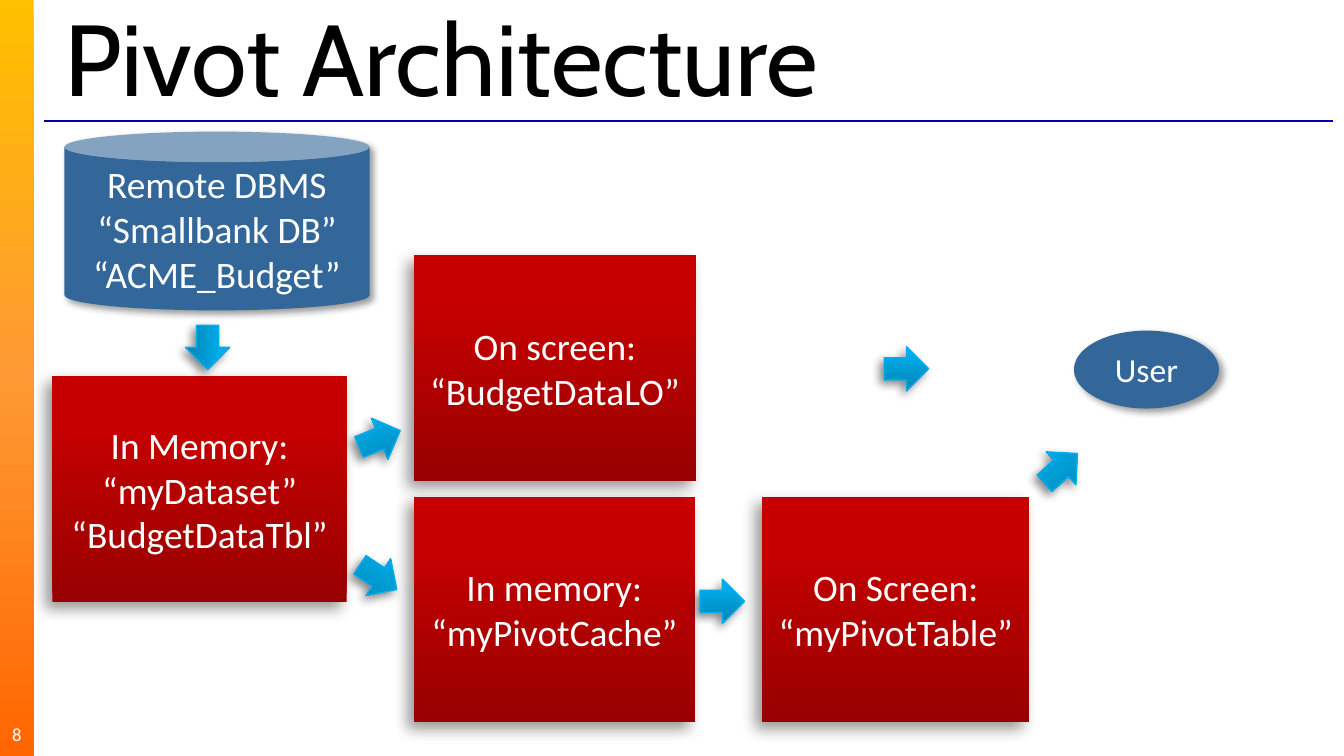
from lxml import etree
from pptx import Presentation, util as u
from pptx.dml.color import RGBColor
from pptx.enum import shapes as s, text as t
from pptx.oxml import ns

# Content: all lengths are in grid units, 100 units to the slide's width
WIDE, HIGH = 100, 56.25
BAR = 2.5
TITLE = "Pivot Architecture"
PAGE = "8"
COLS = {"load": 3.9, "view": 30.8, "out": 56.7}
ROWS = {"top": 19, "mid": 28, "low": 37}

# (column, row, width, height, paragraphs)
BOXES = [
    ("load", "mid", 21.9, 16.8, ["In Memory:", "“myDataset” “BudgetDataTbl”"]),
    ("view", "top", 21, 16.8, ["On screen:", "“BudgetDataLO”"]),
    ("view", "low", 20.9, 16.7, ["In memory:", "“myPivotCache”"]),
    ("out", "low", 19.9, 16.7, ["On Screen:\v“myPivotTable”"]),
]
# (shape, left, top, width, height, size, paragraphs)
ENDS = [
    (s.MSO_SHAPE.OVAL, 79.9, 24.6, 10.8, 5.8, "user", ["User"]),
    (s.MSO_SHAPE.CAN, 4.8, 9.8, 22.7, 13.3, "box",
     ["Remote DBMS", "“Smallbank DB”\v“ACME_Budget”"]),
]
# (left, top, turn)
ARROWS = [(26.6, 31, 338.1), (13.8, 24.2, 90), (26.5, 41.3, 33.8),
          (52.1, 43.1, 0), (77.3, 33.2, 317.9), (65.8, 25.8, 0)]
SIDE = 3.3

THEME = {
    "head": "Cabin", "body": "Calibri",
    "size": {"title": 54, "box": 20, "user": 18, "page": 10},
    "ink": "000000", "pale": "FFFFFF", "rule": "0000A5",
    "blue": "336699", "edge": "00ACEB",
    # stops, then angle counted anticlockwise
    "bar": ([(0, "FFC000"), (50, "FF9933"), (100, "FF6600")], 270),
    "red": ([(0, "980000"), (80, "C60000"), (100, "C70000")], 90),
    "cyan": ([(0, "0083B3"), (80, "00ABE9"), (100, "00ABEA")], 90),
    # opacity %, blur, distance, direction
    "shade": {"end": (40, 4, 3, 45), "box": (40, 8, 5, 135),
              "arrow": (45, 5, 3, 135)},
}

deck = Presentation()
deck.slide_width, deck.slide_height = u.Inches(10), u.Inches(5.625)
UNIT = deck.slide_width / WIDE
page = deck.slides.add_slide(deck.slide_layouts[6])


def grid(*vals):
    return [round(v * UNIT) for v in vals]


def rgb(code):
    return RGBColor.from_string(code)


def node(up, tag, **keys):
    return etree.SubElement(up, ns.qn("a:" + tag),
                            {k: str(v) for k, v in keys.items()})


def paint(fill, look):
    """Fill with one colour, or with (stops, angle)."""
    if isinstance(look, str):
        fill.solid()
        fill.fore_color.rgb = rgb(look)
        return
    stops, turn = look
    fill.gradient()
    fill.gradient_angle = turn
    ramp = fill._xPr.find(".//" + ns.qn("a:gsLst"))
    for old in list(ramp):
        ramp.remove(old)
    for pos, code in stops:
        node(node(ramp, "gs", pos=pos * 1000), "srgbClr", val=code)


def shade(shape, kind):
    alpha, blur, dist, turn = THEME["shade"][kind]
    root = shape._element.spPr.find(ns.qn("a:effectLst"))
    cast = node(root, "outerShdw", blurRad=u.Pt(blur), dist=u.Pt(dist),
                dir=turn * 60000, algn="ctr", rotWithShape=0)
    node(node(cast, "srgbClr", val="000000"), "alpha", val=alpha * 1000)


def draw(kind, spot, look, cast=None):
    shape = page.shapes.add_shape(kind, *grid(*spot))
    shape.shadow.inherit = False
    paint(shape.fill, look)
    shape.line.fill.background()
    if cast:
        shade(shape, cast)
    return shape


def write(shape, paras, size, face="body", ink="pale",
          align=t.PP_ALIGN.CENTER, **frame):
    body = shape.text_frame
    frame = {"word_wrap": True, "vertical_anchor": t.MSO_ANCHOR.MIDDLE, **frame}
    for key, val in frame.items():
        setattr(body, key, val)
    body.text = "\n".join(paras)
    form = {"name": THEME[face], "size": u.Pt(THEME["size"][size])}
    for para in body.paragraphs:
        para.alignment = align
        for run in para.runs:
            for key, val in form.items():
                setattr(run.font, key, val)
            run.font.color.rgb = rgb(THEME[ink])


# Side bar, rule, title and page number
draw(s.MSO_SHAPE.RECTANGLE, (0, 0, BAR, HIGH), THEME["bar"])
rule = page.shapes.add_connector(s.MSO_CONNECTOR.STRAIGHT,
                                 *grid(3.3, 9, 99.2, 9))
rule.line.color.rgb = rgb(THEME["rule"])
rule.line.width = u.Pt(0.75)
node(rule._element.spPr, "effectLst")
write(page.shapes.add_textbox(*grid(3.8, 1.5, 95.8, 5.3)), [TITLE], "title",
      face="head", ink="ink", align=t.PP_ALIGN.LEFT)
bare = dict.fromkeys(
    ("margin_left", "margin_right", "margin_top", "margin_bottom"), 0)
write(page.shapes.add_textbox(*grid(0, 53.1, BAR, 3)), [PAGE], "page", **bare)

# User and database
for kind, *spot, size, paras in ENDS:
    end = draw(kind, spot, THEME["blue"], "end")
    if kind == s.MSO_SHAPE.CAN:
        end.adjustments[0] = 0.171
    write(end, paras, size)

# Data stages
for col, row, wide, high, paras in BOXES:
    spot = (COLS[col], ROWS[row], wide, high)
    write(draw(s.MSO_SHAPE.RECTANGLE, spot, THEME["red"], "box"), paras, "box")

# Flow arrows
for left, top, turn in ARROWS:
    arrow = draw(s.MSO_SHAPE.RIGHT_ARROW, (left, top, SIDE, SIDE),
                 THEME["cyan"], "arrow")
    arrow.rotation = turn
    arrow.line.color.rgb = rgb(THEME["edge"])
    arrow.line.width = u.Pt(0.75)

deck.save("out.pptx")
